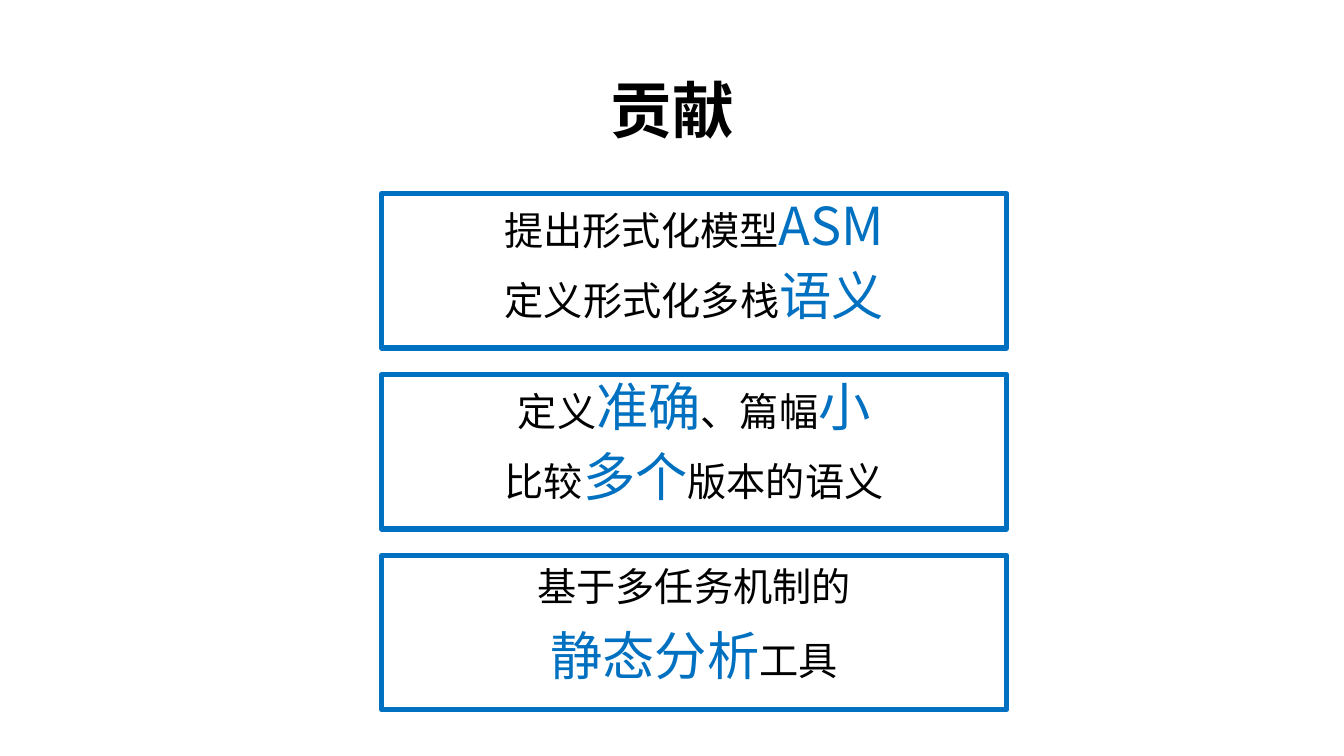
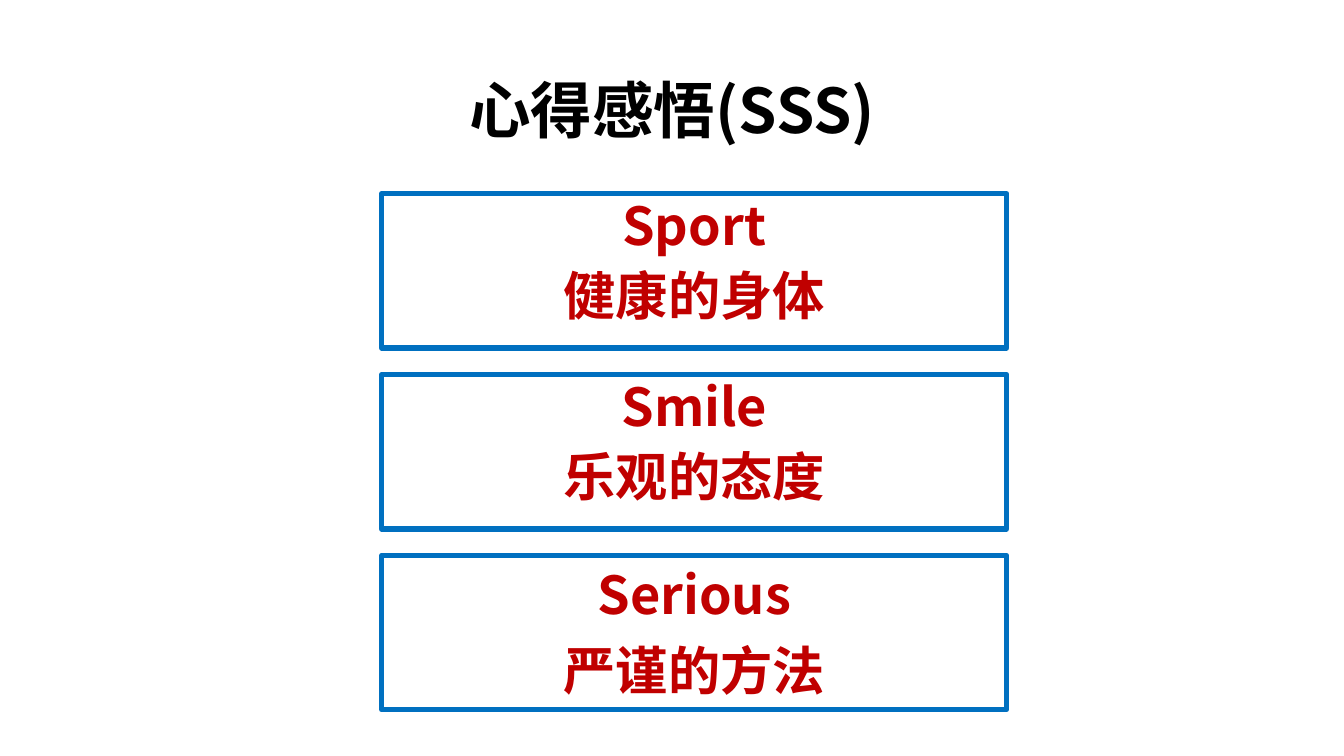
from lxml.etree import SubElement
from pptx import Presentation
from pptx.dml.color import RGBColor
from pptx.enum.shapes import MSO_SHAPE as SHAPE
from pptx.enum.text import MSO_ANCHOR as ANCHOR, MSO_AUTO_SIZE as AUTO, PP_ALIGN as ALIGN
from pptx.oxml.ns import qn
from pptx.util import Pt

FONT = "Noto Sans CJK SC"
BLACK, BLUE, RED = "000000", "0070C0", "C00000"
SMALL, LARGE = 21, 28
TITLE_BOX = (49.68, 21.6, 620.64, 78.48)
CARD_LEFT, CARD_TOP, CARD_W, CARD_H, CARD_PITCH = 204.5, 103.7, 334.8, 82.8, 96.9


def rgb(color):
    return RGBColor.from_string(color)


def set_font(font, size, color, bold=False):
    font.size = Pt(size)
    font.color.rgb = rgb(color)
    font.bold = bold


def set_typeface(p):
    p.font.name = FONT
    props = p._p.pPr.find(qn("a:defRPr"))
    for r in p.runs:
        r.font.name = FONT
    for rpr in [props] + [r._r.rPr for r in p.runs]:
        ea = SubElement(rpr, qn("a:ea"))
        ea.set("typeface", FONT)


def add_title(s, text, box):
    tf = s.shapes.add_textbox(*map(Pt, box)).text_frame
    tf.word_wrap = True
    tf.vertical_anchor = ANCHOR.MIDDLE
    p = tf.paragraphs[0]
    p.alignment = ALIGN.CENTER
    p.line_spacing = 0.9
    p.add_run().text = text
    set_font(p.font, 33, BLACK, True)
    set_typeface(p)


def add_card(s, lines, box, spacing):
    sp = s.shapes.add_shape(SHAPE.RECTANGLE, *map(Pt, box))
    sp.shadow.inherit = False
    sp.fill.background()
    sp.line.color.rgb = rgb(BLUE)
    sp.line.width = Pt(2.75)
    tf = sp.text_frame
    tf.word_wrap = True
    tf.auto_size = AUTO.TEXT_TO_FIT_SHAPE
    tf.vertical_anchor = ANCHOR.TOP
    for i, runs in enumerate(lines):
        p = tf.paragraphs[0] if i == 0 else tf.add_paragraph()
        p.alignment = ALIGN.CENTER
        p.space_before = Pt(7.5)
        p.line_spacing = spacing
        for text, *style in runs:
            r = p.add_run()
            r.text = text
            set_font(r.font, *style)
        set_typeface(p)


def add_cards_slide(prs, title, cards):
    s = prs.slides.add_slide(prs.slide_layouts[6])
    add_title(s, title, TITLE_BOX)
    for i, lines in enumerate(cards):
        box = (CARD_LEFT, CARD_TOP + i * CARD_PITCH, CARD_W, CARD_H)
        add_card(s, lines, box, 1.0 if i == len(cards) - 1 else 0.9)


def plain(text):
    return text, SMALL, BLACK


def key(text):
    return text, LARGE, BLUE


def motto(*lines):
    return [[(text, LARGE, RED, True)] for text in lines]


def main():
    prs = Presentation()
    prs.slide_width, prs.slide_height = Pt(720), Pt(405)
    add_cards_slide(prs, "贡献", [
        [[plain("提出形式化模型"), key("ASM")],
         [plain("定义形式化多栈"), key("语义")]],
        [[plain("定义"), key("准确"), plain("、篇幅"), key("小")],
         [plain("比较"), key("多个"), plain("版本的语义")]],
        [[plain("基于多任务机制的")],
         [key("静态分析"), plain("工具")]],
    ])
    add_cards_slide(prs, "心得感悟(SSS)", [
        motto("Sport", "健康的身体"),
        motto("Smile", "乐观的态度"),
        motto("Serious", "严谨的方法"),
    ])
    prs.save("out.pptx")


if __name__ == "__main__":
    main()
